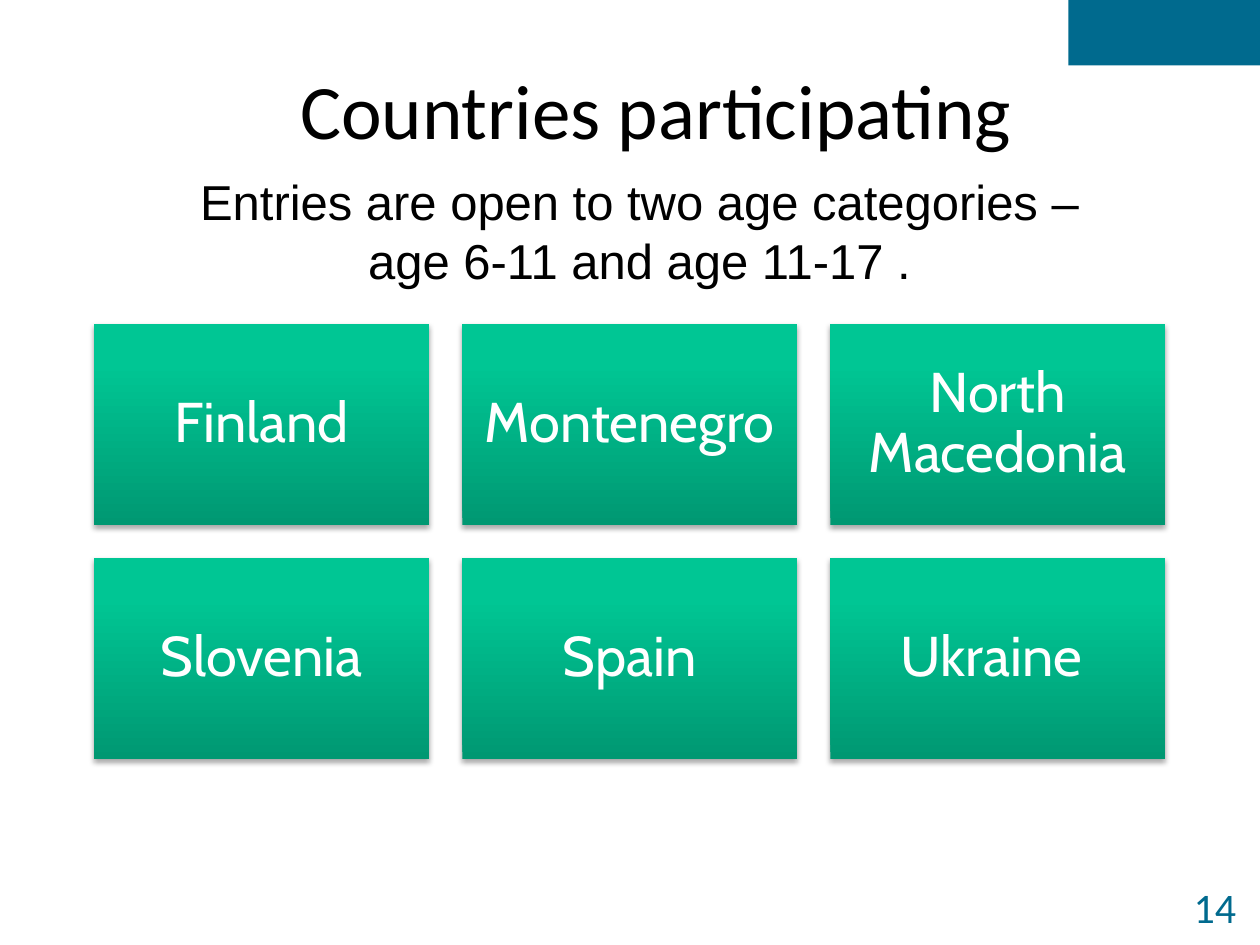
from copy import deepcopy

from lxml import etree
from pptx import Presentation
from pptx.dml.color import RGBColor
from pptx.enum.shapes import MSO_SHAPE
from pptx.enum.text import MSO_ANCHOR, PP_ALIGN
from pptx.oxml.ns import qn
from pptx.util import Cm, Pt

RECTANGLE = MSO_SHAPE.RECTANGLE
MIDDLE, TOP = MSO_ANCHOR.MIDDLE, MSO_ANCHOR.TOP
CENTER, RIGHT = PP_ALIGN.CENTER, PP_ALIGN.RIGHT

COLORS = {
    "accent": "006A8E",
    "text": "000000",
    "tile_text": "FFFFFF",
    "tile_bottom": "009872",
    "tile_middle": "00C694",
    "tile_top": "00C795",
    "shadow": "000000",
}
COUNTRIES = ["Finland", "Montenegro", "North Macedonia", "Slovenia", "Spain", "Ukraine "]
COLUMNS = 3
TILE_WIDTH, TILE_HEIGHT, TILE_GAP = 6.75, 4.05, 0.67
GRID_LEFT, GRID_TOP = 1.9, 6.53


def rgb(name):
    return RGBColor.from_string(COLORS[name])


class SlideBuilder:
    """Adds styled elements to one slide; positions are in centimetres."""

    def __init__(self, slide):
        self.slide = slide

    def set_text(self, shape, text, size, font, color, align=CENTER, anchor=MIDDLE, **spacing):
        frame = shape.text_frame
        frame.word_wrap = True
        frame.vertical_anchor = anchor
        frame.text = text
        paragraph = frame.paragraphs[0]
        for name, value in {"alignment": align, **spacing}.items():
            setattr(paragraph, name, value)
        for name, value in {"size": Pt(size), "name": font}.items():
            setattr(paragraph.runs[0].font, name, value)
        paragraph.runs[0].font.color.rgb = rgb(color)

    def title(self, text, left, top, width, height):
        title = self.slide.shapes.title
        box = {"left": left, "top": top, "width": width, "height": height}
        for name, value in box.items():
            setattr(title, name, Cm(value))
        self.set_text(title, text, 44, "Calibri", "text")

    def text(self, text, box, *style, **options):
        shape = self.slide.shapes.add_textbox(*map(Cm, box))
        self.set_text(shape, text, *style, **options)

    def rectangle(self, *box):
        shape = self.slide.shapes.add_shape(RECTANGLE, *map(Cm, box))
        shape.shadow.inherit = False
        shape.line.fill.background()
        return shape

    def block(self, color, *box):
        shape = self.rectangle(*box)
        shape.fill.solid()
        shape.fill.fore_color.rgb = rgb(color)

    def tile(self, text, *box):
        shape = self.rectangle(*box)
        self.shade(shape)
        self.drop_shadow(shape)
        for side in ("left", "top", "right", "bottom"):
            setattr(shape.text_frame, f"margin_{side}", Cm(0.33))
        self.set_text(shape, text, 32, "Cabin", "tile_text", line_spacing=0.9)

    def shade(self, shape):
        """Fill with a three-stop gradient that runs from bottom to top."""
        fill = shape.fill
        fill.gradient()
        fill.gradient_angle = 90
        stop_list = shape.element.spPr.find(f".//{qn('a:gsLst')}")
        stop_list.append(deepcopy(stop_list[-1]))
        stops = [(0, "tile_bottom"), (0.8, "tile_middle"), (1, "tile_top")]
        for stop, (position, color) in zip(fill.gradient_stops, stops):
            stop.position = position
            stop.color.rgb = rgb(color)

    def drop_shadow(self, shape):
        effects = shape.element.spPr.find(qn("a:effectLst"))
        shadow = etree.SubElement(
            effects, qn("a:outerShdw"), blurRad=str(Pt(3.1)), dist=str(Pt(1.8)),
            dir="5400000", rotWithShape="0")
        color = etree.SubElement(shadow, qn("a:srgbClr"), val=COLORS["shadow"])
        etree.SubElement(color, qn("a:alpha"), val="35000")


def main():
    presentation = Presentation()
    presentation.slide_width, presentation.slide_height = Cm(25.4), Cm(19.05)
    title_only = presentation.slide_layouts[5]
    builder = SlideBuilder(presentation.slides.add_slide(title_only))

    builder.block("accent", 21.54, 0, 3.86, 1.32)
    builder.text("14", (22.68, 17.73, 2.49, 1.09), 24, "Calibri", "accent",
                 align=RIGHT, space_after=Pt(6))
    builder.title("Countries participating", 1.9, 0.74, 22.66, 2.92)

    for index, country in enumerate(COUNTRIES):
        row, column = divmod(index, COLUMNS)
        builder.tile(country,
                     GRID_LEFT + column * (TILE_WIDTH + TILE_GAP),
                     GRID_TOP + row * (TILE_HEIGHT + TILE_GAP),
                     TILE_WIDTH, TILE_HEIGHT)

    builder.text("Entries are open to two age categories – age 6-11 and age 11-17 .",
                 (3.1, 3.33, 19.58, 2.64), 28, "Arial", "text", anchor=TOP)

    presentation.save("out.pptx")


if __name__ == "__main__":
    main()
